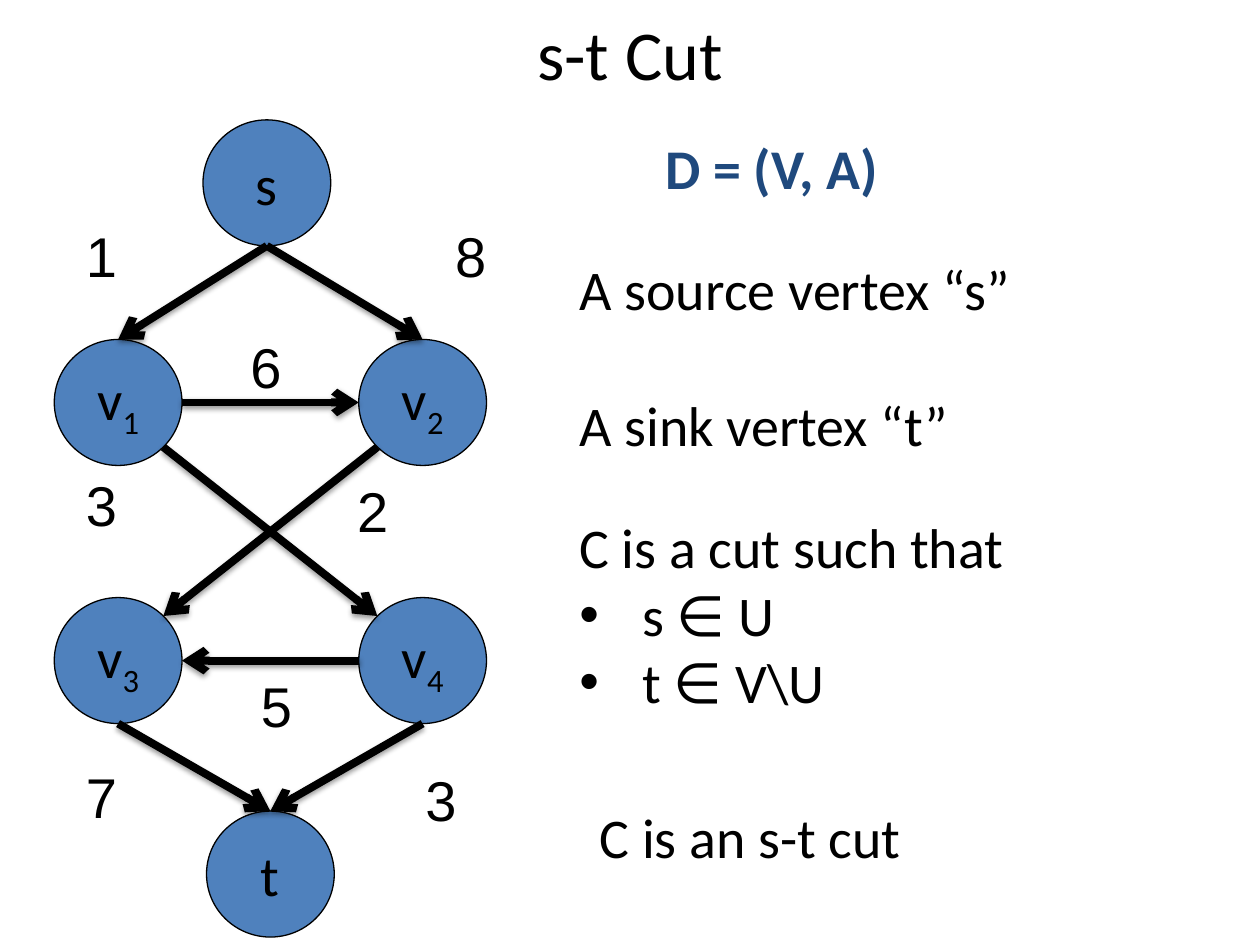
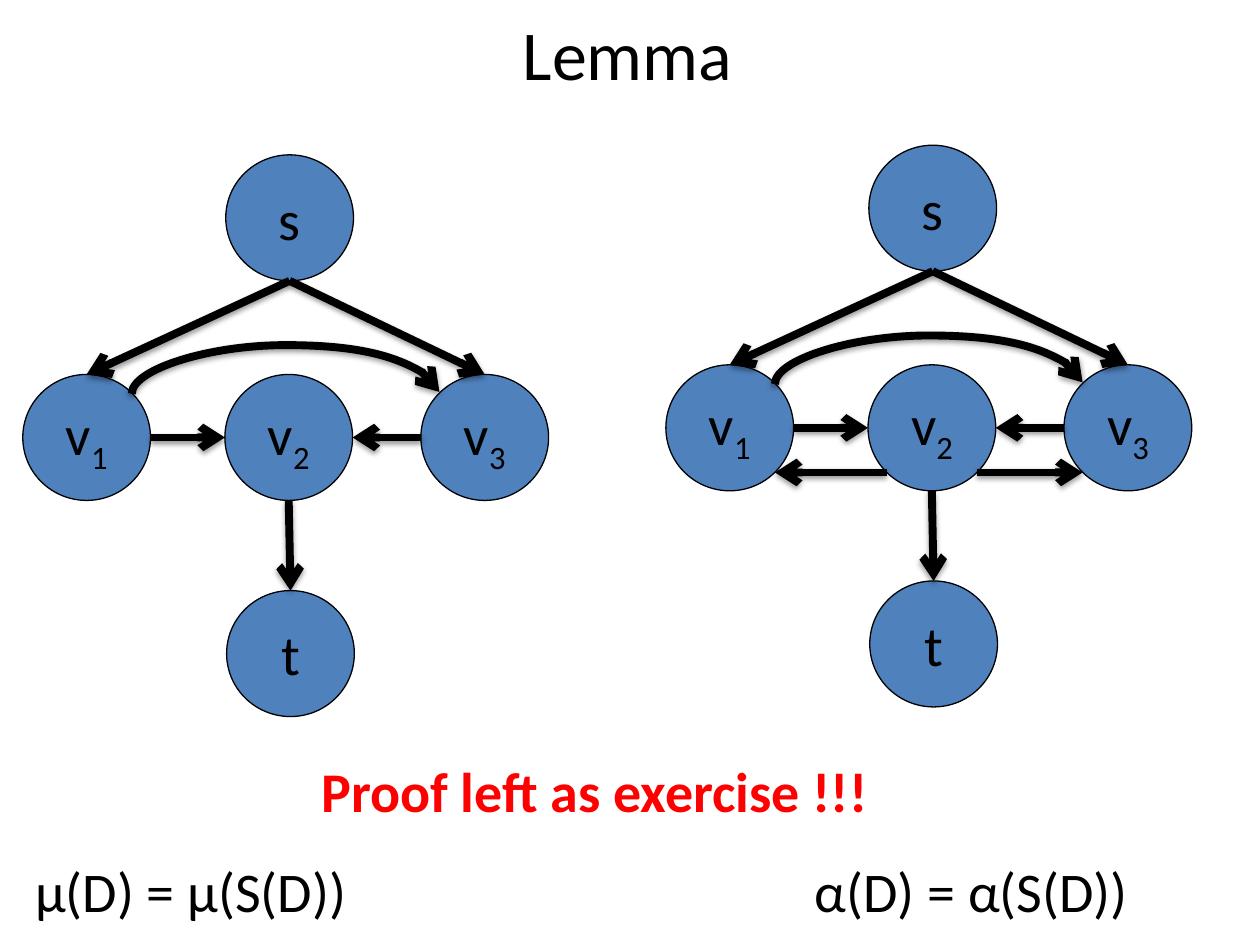
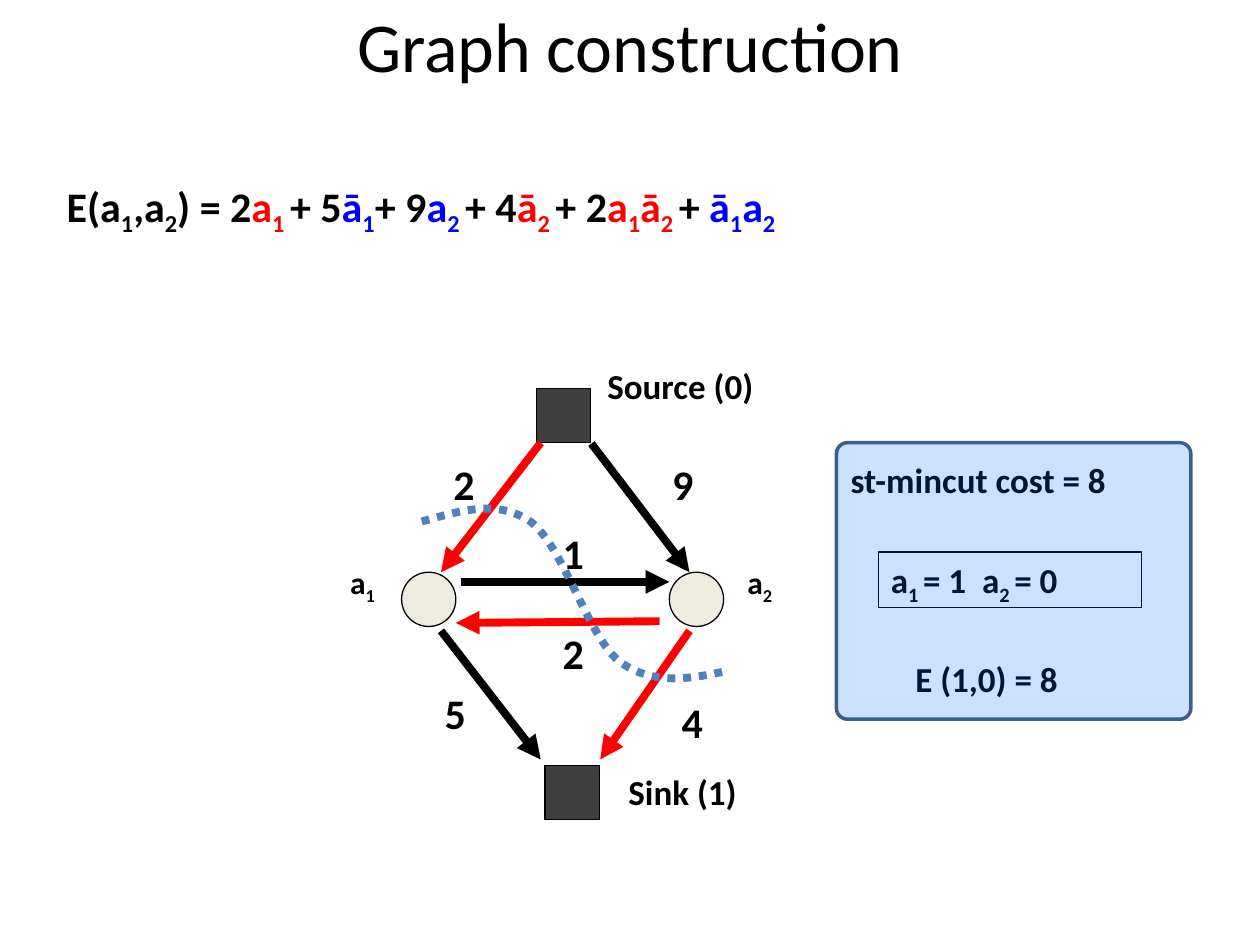
from lxml import etree
from pptx import Presentation
from pptx.dml.color import RGBColor
from pptx.enum.dml import MSO_LINE
from pptx.enum.shapes import MSO_CONNECTOR, MSO_SHAPE
from pptx.enum.text import MSO_ANCHOR, MSO_AUTO_SIZE, PP_ALIGN
from pptx.oxml import parse_xml
from pptx.oxml.ns import nsdecls, qn
from pptx.util import Pt

OVAL, RECT, ROUNDED = MSO_SHAPE.OVAL, MSO_SHAPE.RECTANGLE, MSO_SHAPE.ROUNDED_RECTANGLE
STRAIGHT, CURVE = MSO_CONNECTOR.STRAIGHT, MSO_CONNECTOR.CURVE
CENTER, LEFT, MIDDLE = PP_ALIGN.CENTER, PP_ALIGN.LEFT, MSO_ANCHOR.MIDDLE
GROW, DOTS = MSO_AUTO_SIZE.SHAPE_TO_FIT_TEXT, MSO_LINE.ROUND_DOT

COLORS = {name: RGBColor.from_string(value) for name, value in {
    "black": "000000", "node": "4F81BD", "navy": "1F497D", "red": "FF0000",
    "blue": "0000FF", "cream": "EEECE1", "gray": "3F3F3F",
    "panel": "0066FF", "panel_line": "3A5F8C"}.items()}

NODE_W, NODE_H = 73, 72
DIAG = 0.146  # where the diagonal meets a circle, as a share of its box
SIDES = {"T": (0.5, 0), "B": (0.5, 1), "L": (0, 0.5), "R": (1, 0.5),
         "TL": (DIAG, DIAG), "TR": (1 - DIAG, DIAG),
         "BL": (DIAG, 1 - DIAG), "BR": (1 - DIAG, 1 - DIAG)}


def write(p, parts, size=32, bold=False, font="Calibri", align=LEFT):
    """Fill a paragraph with (text, colour) parts; _x_ is a subscript."""
    p.alignment = align
    for text, color in parts:
        for i, piece in enumerate(text.split("_")):
            if piece:
                r = p.add_run()
                r.text = piece
                r.font.size, r.font.bold, r.font.name = Pt(size), bold, font
                r.font.color.rgb = COLORS[color]
                if i % 2:
                    r.font._element.set("baseline", "-25000")


def add_arrow(s, start, end, color="black", head="arrow", shadow=True, kind=STRAIGHT):
    c = s.shapes.add_connector(kind, *(Pt(v) for v in (*start, *end)))
    c.line.width = Pt(4.5)
    c.line.color.rgb = COLORS[color]
    etree.SubElement(c.line._get_or_add_ln(), qn("a:tailEnd"), type=head)
    effects = etree.SubElement(c._element.spPr, qn("a:effectLst"))
    if shadow:
        effects.append(parse_xml(
            f'<a:outerShdw {nsdecls("a")} blurRad="39370" dist="20320" dir="5400000" '
            'rotWithShape="0"><a:srgbClr val="000000"><a:alpha val="38000"/>'
            '</a:srgbClr></a:outerShdw>'))
    return c


prs = Presentation()
prs.slide_width, prs.slide_height = Pt(720), Pt(540)

# Slides and titles
slides = []
for title, left, top, width, height in [("s-t Cut", 36, 4.3, 648, 51),
                                        ("Lemma", 3.6, 4.3, 710, 51),
                                        ("Graph construction", 36, 0.7, 648, 49)]:
    s = prs.slides.add_slide(prs.slide_layouts[5])
    sp = s.shapes.title
    sp.left, sp.top, sp.width, sp.height = Pt(left), Pt(top), Pt(width), Pt(height)
    sp.text_frame.vertical_anchor = MIDDLE
    write(sp.text_frame.paragraphs[0], [(title, "black")], 40, align=CENTER)
    slides.append(s)
cut, lemma, build = slides

# Directed graphs: nodes, then arcs from one side to another
lemma_nodes = {"s": (116, 0), "v_1_": (0, 125.5), "v_2_": (115.5, 125.5),
               "v_3_": (227.5, 125.5), "t": (116.5, 249)}
lemma_arcs = ["v_1_ R v_2_ L", "s B v_1_ T", "v_2_ B t T", "s B v_3_ T", "v_3_ L v_2_ R"]
graphs = [
    (cut, 31, 68.5, {"s": (85, 0), "v_1_": (0, 125.5), "v_2_": (174, 125.5),
                     "v_3_": (0, 273), "v_4_": (174, 273), "t": (87, 395)},
     ["s B v_1_ T", "s B v_2_ T", "v_1_ R v_2_ L", "v_1_ BR v_4_ TL",
      "v_2_ BL v_3_ TR", "v_4_ L v_3_ R", "v_3_ B t T", "v_4_ B t T"], False),
    (lemma, 13, 88.5, lemma_nodes, lemma_arcs, True),
    (lemma, 380.5, 83, lemma_nodes,
     lemma_arcs + ["v_2_ BL v_1_ BR", "v_2_ BR v_3_ BL"], True),
]
for s, left, top, nodes, arcs, bow in graphs:
    sites = {}
    for name, (x, y) in nodes.items():
        sp = s.shapes.add_shape(OVAL, Pt(left + x), Pt(top + y), Pt(NODE_W), Pt(NODE_H))
        sp.shadow.inherit = False
        sp.fill.solid()
        sp.fill.fore_color.rgb = COLORS["node"]
        sp.line.color.rgb = COLORS["black"]
        sp.line.width = Pt(0.75)
        sp.text_frame.word_wrap = False
        write(sp.text_frame.paragraphs[0], [(name, "black")], align=CENTER)
        for side, (fx, fy) in SIDES.items():
            sites[name, side] = (left + x + fx * NODE_W, top + y + fy * NODE_H)
    for arc in arcs:
        tail, out, head, into = arc.split()
        add_arrow(s, sites[tail, out], sites[head, into])
    if bow:  # drawn upright, then turned a quarter to arch over the middle node
        (x1, y), (x2, _) = sites["v_1_", "TR"], sites["v_3_", "TL"]
        mid, half = (x1 + x2) / 2, (x2 - x1) / 2
        c = add_arrow(s, (mid + 0.5, y + half), (mid - 0.5, y - half), kind=CURVE)
        c._element.spPr.find(qn("a:xfrm")).set("rot", "5400000")
        guides = c._element.spPr.find(qn("a:prstGeom")).get_or_add_avLst()
        etree.SubElement(guides, qn("a:gd"), name="adj1", fmla="val 2800000")

# Capacities
texts = [(cut, x, y, 32, 46, [(n, "black")], 32, False, "Arial") for n, x, y in [
    ("1", 42, 123), ("8", 253, 123), ("6", 136, 186.5), ("3", 42, 265.5),
    ("2", 197, 269), ("5", 142, 380), ("7", 42, 432), ("3", 236, 434)]]
texts += [(build, x, y, 28, 36, [(n, "black")], 24, True, "Calibri") for n, x, y in [
    ("2", 252, 258.5), ("9", 377, 258.5), ("1", 314.5, 298), ("2", 314.5, 355),
    ("5", 247, 389.5), ("4", 382.5, 394.5)]]

# Statements and captions
energy = [("E(a_1_,a_2_) = 2", "black"), ("a_1 _", "red"), ("+ 5", "black"),
          ("ā_1_", "blue"), ("+ 9", "black"), ("a_2 _", "blue"), ("+ 4", "black"),
          ("ā_2 _", "red"), ("+ 2", "black"), ("a_1_ā_2 _", "red"), ("+ ", "black"),
          ("ā_1_a_2_", "blue")]
for s, x, y, w, h, text, color, size, bold in [
        (cut, 373, 73, 155, 46, "D = (V, A)", "navy", 32, True),
        (cut, 324, 142, 284, 46, "A source vertex “s”", "black", 32, False),
        (cut, 324, 219.5, 238, 46, "A sink vertex “t”", "black", 32, False),
        (cut, 335.5, 455, 212, 46, "C is an s-t cut", "black", 32, False),
        (lemma, 13, 486, 221, 46, "μ(D) = μ(S(D))", "black", 32, False),
        (lemma, 458.5, 486, 222, 46, "α(D) = α(S(D))", "black", 32, False),
        (lemma, 176.5, 428.5, 381, 46, "Proof left as exercise !!!", "red", 32, True),
        (build, 193, 318, 45, 29, "a_1_", "black", 18, True),
        (build, 420, 318, 45, 29, "a_2_", "black", 18, True),
        (build, 340, 205, 117, 31, "Source (0)", "black", 20, True),
        (build, 352, 437, 96, 31, "Sink (1)", "black", 20, True),
        (build, 479, 258.5, 227, 32, "st-mincut cost = 8", "black", 20, True),
        (build, 516, 372, 125, 32, "E (1,0) = 8", "black", 20, True)]:
    texts.append((s, x, y, w, h, [(text, color)], size, bold, "Calibri"))
texts.append((build, 31, 99.5, 493, 37, energy, 24, True, "Calibri"))

for s, x, y, w, h, parts, size, bold, font in texts:
    tf = s.shapes.add_textbox(Pt(x), Pt(y), Pt(w), Pt(h)).text_frame
    tf.word_wrap, tf.auto_size = False, GROW
    write(tf.paragraphs[0], parts, size, bold, font)

# Definition of the cut, with two bullets
tf = cut.shapes.add_textbox(Pt(324), Pt(289.5), Pt(289), Pt(124)).text_frame
tf.word_wrap, tf.auto_size = False, GROW
write(tf.paragraphs[0], [("C is a cut such that", "black")])
for text in ("s ∈ U", "t ∈ V\\U"):
    p = tf.add_paragraph()
    write(p, [(text, "black")])
    pPr = p._p.get_or_add_pPr()
    pPr.set("marL", str(Pt(36)))
    pPr.set("indent", str(Pt(-36)))
    etree.SubElement(pPr, qn("a:buFont"), typeface="Arial")
    etree.SubElement(pPr, qn("a:buChar"), char="•")

# Terminals and variables of the construction
for shape, x, y, color in [(OVAL, 382.5, 327, "cream"), (OVAL, 229.5, 327, "cream"),
                           (RECT, 306.5, 222, "gray"), (RECT, 311.5, 437.5, "gray")]:
    sp = build.shapes.add_shape(shape, Pt(x), Pt(y), Pt(31), Pt(31))
    sp.shadow.inherit = False
    sp.fill.solid()
    sp.fill.fore_color.rgb = COLORS[color]
    sp.line.color.rgb = COLORS["black"]
    sp.line.width = Pt(0.75)

# Arcs of the construction, cut ones in red
for start, end, color in [((309, 253), (252, 327), "red"), ((338, 253.5), (394, 327), "black"),
                          ((263.5, 332.5), (382.5, 332.5), "black"),
                          ((377, 355), (260.5, 356), "red"),
                          ((252, 360.5), (309, 434), "black"),
                          ((394, 360.5), (343, 434), "red")]:
    add_arrow(build, start, end, color, "triangle", shadow=False)

# Dotted cut line: each three points after the start form one Bézier curve
curve_points = [(263, 292), (284.5, 285), (303, 298), (322, 312), (335.5, 363.5),
                (354, 378), (373, 392), (395, 387.5), (417, 383)]
fb = build.shapes.build_freeform(241, 298, scale=Pt(1))
fb.add_line_segments(curve_points, close=False)
sp = fb.convert_to_shape()
sp.shadow.inherit = False
sp.fill.background()
sp.line.color.rgb = COLORS["node"]
sp.line.width = Pt(4.5)
sp.line.dash_style = DOTS
outline = next(sp._element.iter(qn("a:path")))
segments = outline.findall(qn("a:lnTo"))
for k in range(0, len(segments), 3):
    bezier = etree.SubElement(outline, qn("a:cubicBezTo"))
    for segment in segments[k:k + 3]:
        bezier.append(segment[0])
        outline.remove(segment)

# Result panel: framed assignment under a translucent sheet
sp = build.shapes.add_textbox(Pt(502), Pt(315.5), Pt(150.5), Pt(31.5))
sp.line.color.rgb = COLORS["black"]
sp.line.width = Pt(0.75)
sp.text_frame.word_wrap = True
write(sp.text_frame.paragraphs[0], [("a_1 _= 1  a_2 _= 0", "black")], 20, True)

sp = build.shapes.add_shape(ROUNDED, Pt(478), Pt(253), Pt(202.5), Pt(158))
sp.adjustments[0] = 0.04
sp.shadow.inherit = False
sp.fill.solid()
sp.fill.fore_color.rgb = COLORS["panel"]
tint = sp._element.spPr.find(qn("a:solidFill"))[0]
etree.SubElement(tint, qn("a:alpha"), val="20000")
sp.line.color.rgb = COLORS["panel_line"]
sp.line.width = Pt(2)

prs.save("out.pptx")
